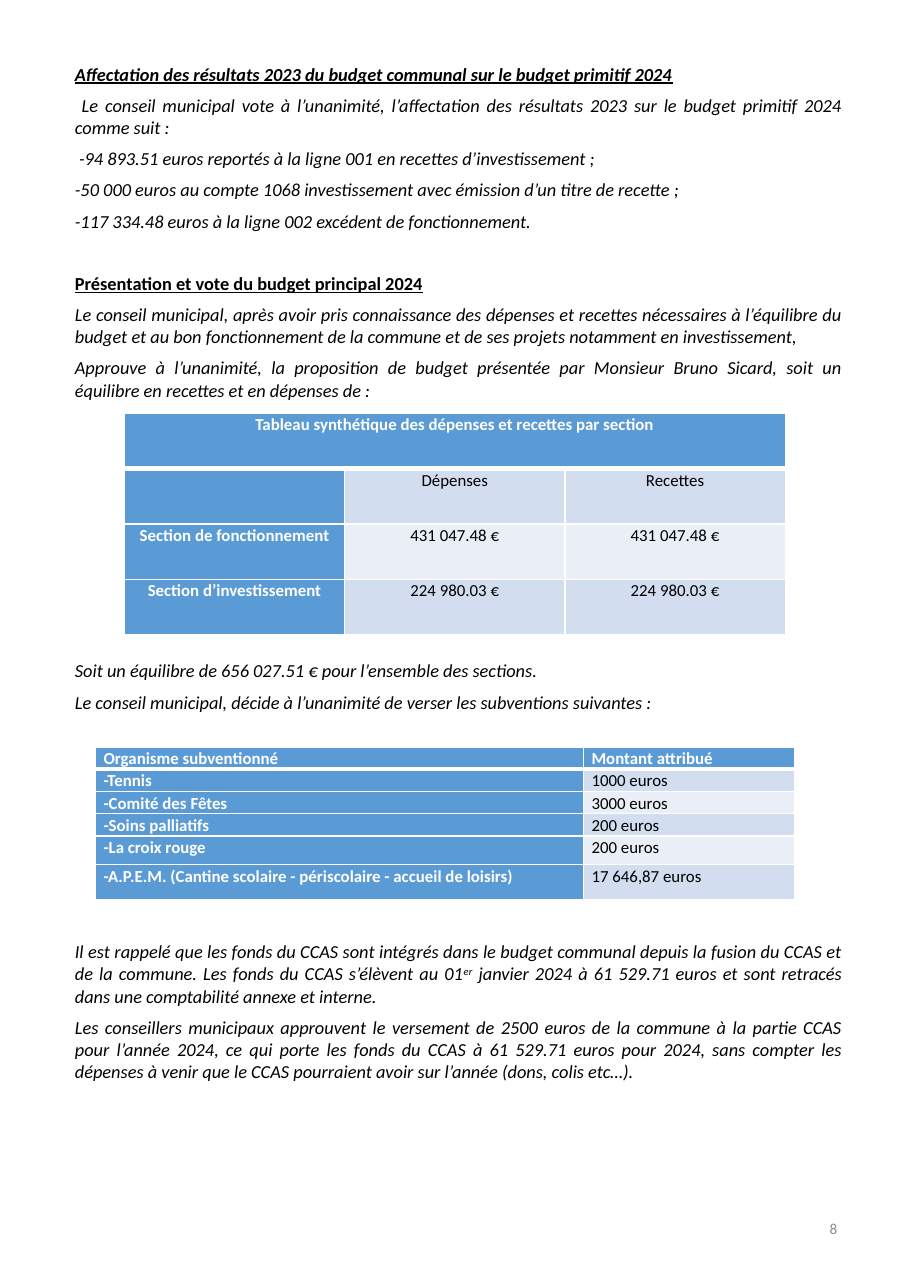
import dataclasses
import typing

import lxml.etree
import pptx
import pptx.dml.color
import pptx.enum.text
import pptx.oxml.ns
import pptx.util

ALIGN = pptx.enum.text.PP_ALIGN
ANCHOR = pptx.enum.text.MSO_ANCHOR


@dataclasses.dataclass(frozen=True)
class Theme:
    font: str = "Calibri"
    ink: str = "000000"
    paper: str = "FFFFFF"
    muted: str = "8C8C8C"
    accent: str = "5B9BD5"
    bands: tuple[str, str] = ("D2DEEF", "EAEFF7")
    text_size: float = 12
    table_size: float = 11
    number_size: float = 9.9
    paragraph_gap: float = 6
    line_step: float = 20.4
    table_leading: float = 1.07
    rule: float = 1
    header_rule: float = 3


@dataclasses.dataclass(frozen=True)
class Style:
    size: float
    color: str
    bold: bool = False
    italic: bool = False
    underline: bool = False
    superscript: bool = False


@dataclasses.dataclass(frozen=True)
class Passage:
    runs: tuple[tuple[str, Style], ...]
    lines_before: int = 0


@dataclasses.dataclass(frozen=True)
class Area:
    left: float
    top: float
    width: float
    height: float


@dataclasses.dataclass(frozen=True)
class Grid:
    left: float
    top: float
    columns: tuple[float, ...]
    rows: tuple[float, ...]
    texts: tuple[tuple[str, ...], ...]
    alignment: ALIGN
    title_spans: bool = False


THEME = Theme()
PAGE_WIDTH = pptx.util.Inches(8.27)
PAGE_HEIGHT = pptx.util.Inches(11.69)

BODY = Style(THEME.text_size, THEME.ink, italic=True)
HEADING = dataclasses.replace(BODY, bold=True, italic=False, underline=True)
TITLE = dataclasses.replace(HEADING, italic=True)
SUPERSCRIPT = dataclasses.replace(BODY, superscript=True)
PAGE_NUMBER = Style(THEME.number_size, THEME.muted)
TABLE_HEADER = Style(THEME.table_size, THEME.paper, bold=True)
TABLE_VALUE = Style(THEME.table_size, THEME.ink)

TITLE_AREA = Area(7.01, 4.45, 86.7, 2.42)
BODY_AREA = Area(7.01, 6.87, 86.7, 78.33)
NUMBER_AREA = Area(70.62, 92.73, 22.49, 5.3)

TITLE_PASSAGES = (
    Passage((("Affectation des résultats 2023 du budget communal sur le budget primitif 2024", TITLE),)),
)
BODY_PASSAGES = (
    Passage(((" Le conseil municipal vote à l’unanimité, l’affectation des résultats 2023 sur le budget primitif 2024 comme suit :", BODY),)),
    Passage(((" -94 893.51 euros reportés à la ligne 001 en recettes d’investissement ;", BODY),)),
    Passage((("-50 000 euros au compte 1068 investissement avec émission d’un titre de recette ;", BODY),)),
    Passage((("-117 334.48 euros à la ligne 002 excédent de fonctionnement.", BODY),)),
    Passage((("Présentation et vote du budget principal 2024", HEADING),), 1),
    Passage((("Le conseil municipal, après avoir pris connaissance des dépenses et recettes nécessaires à l’équilibre du budget et au bon fonctionnement de la commune et de ses projets notamment en investissement,", BODY),)),
    Passage((("Approuve à l’unanimité, la proposition de budget présentée par Monsieur Bruno Sicard, soit un équilibre en recettes et en dépenses de :", BODY),)),
    Passage((("Soit un équilibre de 656 027.51 € pour l’ensemble des sections.", BODY),), 8),
    Passage((("Le conseil municipal, décide à l’unanimité de verser les subventions suivantes :", BODY),)),
    Passage((
        ("Il est rappelé que les fonds du CCAS sont intégrés dans le budget communal depuis la fusion du CCAS et de la commune. Les fonds du CCAS s’élèvent au 01", BODY),
        ("er", SUPERSCRIPT),
        (" janvier 2024 à 61 529.71 euros et sont retracés dans une comptabilité annexe et interne.", BODY),
    ), 7),
    Passage((("Les conseillers municipaux approuvent le versement de 2500 euros de la commune à la partie CCAS pour l’année 2024, ce qui porte les fonds du CCAS à 61 529.71 euros pour 2024, sans compter les dépenses à venir que le CCAS pourraient avoir sur l’année (dons, colis etc…).", BODY),)),
)

BUDGET = Grid(13.66, 32.08, (24.18,) * 3, (4.3,) * 4, (
    ("Tableau synthétique des dépenses et recettes par section", "", ""),
    ("", "Dépenses", "Recettes"),
    ("Section de fonctionnement", "431 047.48 €", "431 047.48 €"),
    ("Section d’investissement", "224 980.03 €", "224 980.03 €"),
), ALIGN.CENTER, title_spans=True)
GRANTS = Grid(10.52, 58, (53.57, 23.1), (1.7,) * 4 + (2.22, 2.74), (
    ("Organisme subventionné", "Montant attribué"),
    ("-Tennis", "1000 euros"),
    ("-Comité des Fêtes", "3000 euros"),
    ("-Soins palliatifs", "200 euros"),
    ("-La croix rouge", "200 euros"),
    ("-A.P.E.M. (Cantine scolaire - périscolaire - accueil de loisirs)", "17 646,87 euros"),
), ALIGN.JUSTIFY)


def across(percent: float) -> int:
    return round(PAGE_WIDTH * percent / 100)


def down(percent: float) -> int:
    return round(PAGE_HEIGHT * percent / 100)


def bounds(area: Area) -> tuple[int, int, int, int]:
    return across(area.left), down(area.top), across(area.width), down(area.height)


def add_run(paragraph: typing.Any, text: str, style: Style) -> None:
    run = paragraph.add_run()
    run.text = text
    run.font.name = THEME.font
    run.font.size = pptx.util.Pt(style.size)
    run.font.bold = style.bold
    run.font.italic = style.italic
    run.font.underline = style.underline
    run.font.color.rgb = pptx.dml.color.RGBColor.from_string(style.color)
    if style.superscript:
        run.font._element.set("baseline", "30000")


def fill_placeholder(shape: typing.Any, area: Area, passages: tuple[Passage, ...]) -> None:
    shape.left, shape.top, shape.width, shape.height = bounds(area)
    frame = shape.text_frame
    frame.word_wrap = True
    frame.auto_size = pptx.enum.text.MSO_AUTO_SIZE.NONE
    frame.vertical_anchor = ANCHOR.TOP
    for index, passage in enumerate(passages):
        paragraph = frame.add_paragraph() if index else frame.paragraphs[0]
        properties = paragraph._p.get_or_add_pPr()
        properties.set("marL", "0")
        properties.set("indent", "0")
        lxml.etree.SubElement(properties, pptx.oxml.ns.qn("a:buNone"))
        paragraph.alignment = ALIGN.JUSTIFY
        paragraph.space_before = pptx.util.Pt(passage.lines_before * THEME.line_step)
        paragraph.space_after = pptx.util.Pt(THEME.paragraph_gap)
        for text, style in passage.runs:
            add_run(paragraph, text, style)


def set_borders(cell: typing.Any, row: int) -> None:
    widths = {"L": THEME.rule, "R": THEME.rule,
              "T": THEME.header_rule if row == 1 else THEME.rule,
              "B": THEME.header_rule if row == 0 else THEME.rule}
    properties = cell._tc.get_or_add_tcPr()
    for side, width in widths.items():
        line = lxml.etree.SubElement(properties, pptx.oxml.ns.qn(f"a:ln{side}"), w=str(pptx.util.Pt(width)))
        fill = lxml.etree.SubElement(line, pptx.oxml.ns.qn("a:solidFill"))
        lxml.etree.SubElement(fill, pptx.oxml.ns.qn("a:srgbClr"), val=THEME.paper)


def draw_grid(slide: typing.Any, grid: Grid) -> None:
    area = Area(grid.left, grid.top, sum(grid.columns), sum(grid.rows))
    table = slide.shapes.add_table(len(grid.rows), len(grid.columns), *bounds(area)).table
    table.first_row = table.horz_banding = False
    for column, width in zip(table.columns, grid.columns):
        column.width = across(width)
    for row, (table_row, height, texts) in enumerate(zip(table.rows, grid.rows, grid.texts)):
        table_row.height = down(height)
        for column, text in enumerate(texts):
            cell = table.cell(row, column)
            header = row == 0 or column == 0
            set_borders(cell, row)
            cell.fill.solid()
            color = THEME.accent if header else THEME.bands[(row - 1) % 2]
            cell.fill.fore_color.rgb = pptx.dml.color.RGBColor.from_string(color)
            cell.margin_left = cell.margin_right = pptx.util.Inches(0.07)
            cell.margin_top = cell.margin_bottom = 0
            paragraph = cell.text_frame.paragraphs[0]
            paragraph.alignment = grid.alignment
            paragraph.line_spacing = THEME.table_leading
            if text:
                add_run(paragraph, text, TABLE_HEADER if header else TABLE_VALUE)
            else:
                paragraph.font.size = pptx.util.Pt(THEME.table_size)
    if grid.title_spans:
        table.cell(0, 0).merge(table.cell(0, len(grid.columns) - 1))


def draw_page_number(slide: typing.Any, number: str) -> None:
    frame = slide.shapes.add_textbox(*bounds(NUMBER_AREA)).text_frame
    frame.word_wrap = True
    frame.vertical_anchor = ANCHOR.MIDDLE
    paragraph = frame.paragraphs[0]
    paragraph.alignment = ALIGN.RIGHT
    add_run(paragraph, number, PAGE_NUMBER)


def main() -> None:
    presentation = pptx.Presentation()
    presentation.slide_width, presentation.slide_height = PAGE_WIDTH, PAGE_HEIGHT
    slide = presentation.slides.add_slide(presentation.slide_layouts[1])
    fill_placeholder(slide.shapes.title, TITLE_AREA, TITLE_PASSAGES)
    fill_placeholder(slide.placeholders[1], BODY_AREA, BODY_PASSAGES)
    for grid in (BUDGET, GRANTS):
        draw_grid(slide, grid)
    draw_page_number(slide, "8")
    presentation.save("out.pptx")


if __name__ == "__main__":
    main()
